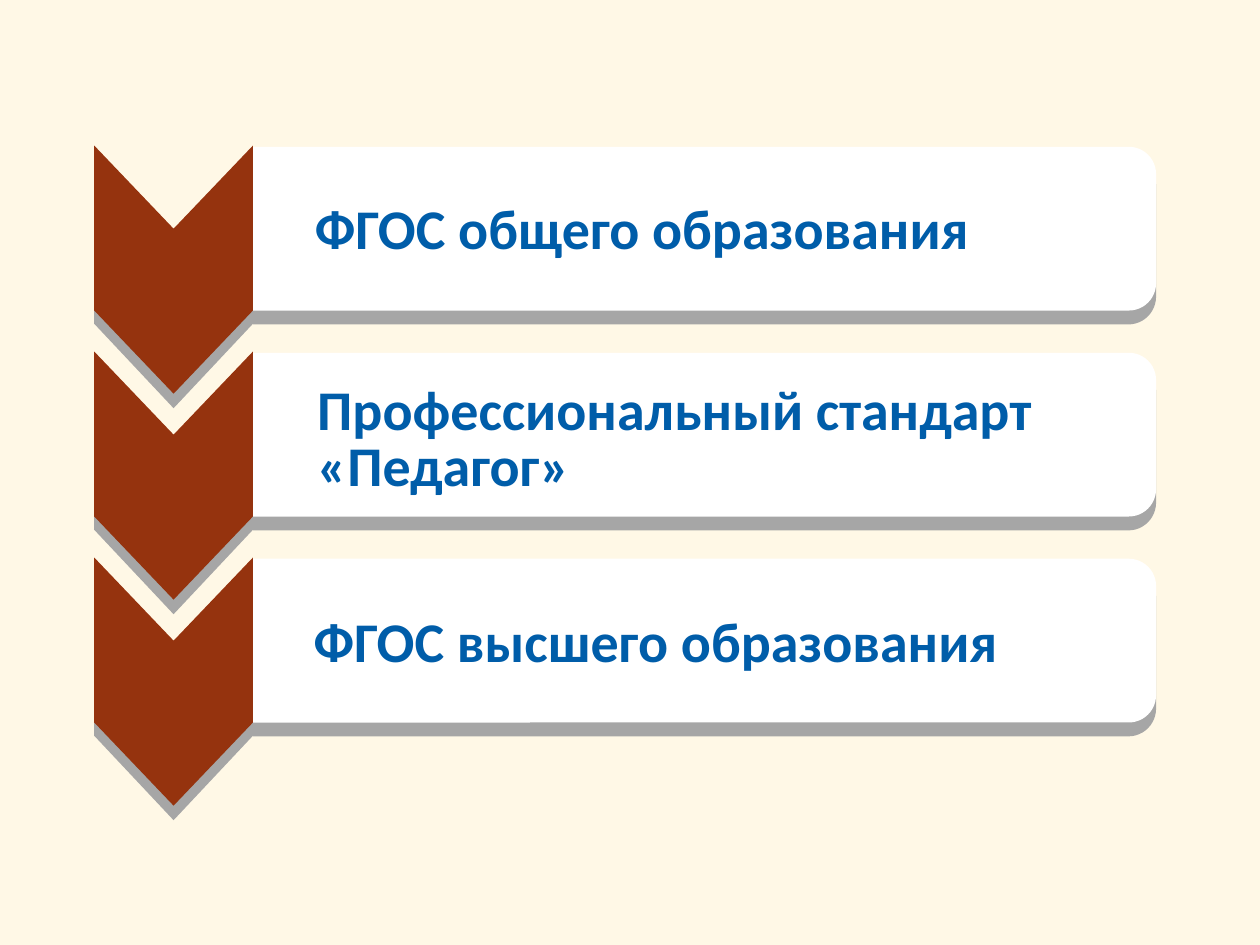
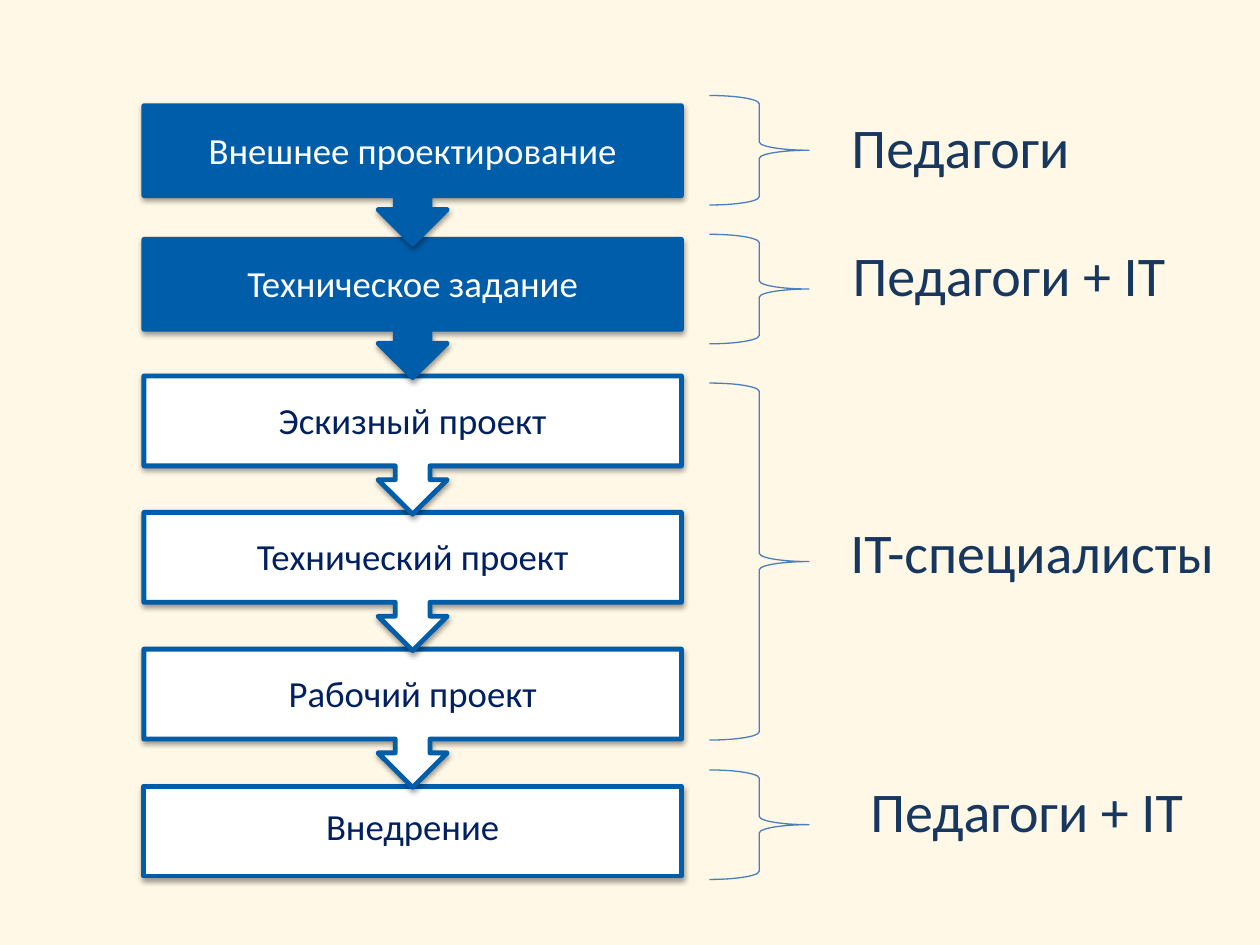
"""Build two slides on education standards and project stages."""
from lxml import etree
from pptx import Presentation
from pptx import util as u
from pptx.dml.color import RGBColor
from pptx.enum import shapes, text
from pptx.oxml import ns

CREAM = RGBColor(0xFF, 0xF8, 0xE6)
WHITE = RGBColor(0xFF, 0xFF, 0xFF)
GREY = RGBColor(0xA6, 0xA6, 0xA6)
BROWN = RGBColor(0x95, 0x33, 0x0E)
BLUE = RGBColor(0x00, 0x5D, 0xA9)
NAVY = RGBColor(0x00, 0x20, 0x60)
SLATE = RGBColor(0x17, 0x37, 0x5E)
BRACE_BLUE = RGBColor(0x4B, 0x7E, 0xBC)
FONT = "Calibri"
KIND = shapes.MSO_SHAPE

ROW_PITCH = 117.7
STANDARDS = [
    ("ФГОС общего образования", 172.8, 107.3, None),
    ("Профессиональный стандарт\v«Педагог»", 174.2, 216.7, 32),
    ("ФГОС высшего образования", 172.1, 351.4, 30),
]

STEP_LEFT, STEP_RIGHT, STEP_HEIGHT = 82.2, 389.4, 51.4
STEPS = [
    ("Внешнее проектирование", 60.4, BLUE, WHITE),
    ("Техническое задание", 136.8, BLUE, WHITE),
    ("Эскизный проект", 214.8, WHITE, NAVY),
    ("Технический проект", 292.8, WHITE, NAVY),
    ("Рабочий проект", 370.9, WHITE, NAVY),
    ("Внедрение", 449.2, WHITE, NAVY),
]
ROLES = [
    ("Педагоги", 54.6, 62.6, 479.5, 60.5),
    ("Педагоги + IT", 133.9, 62.6, 480.2, 133.9),
    ("IT-специалисты", 218.9, 204, 478.8, 292.3),
    ("Педагоги + IT", 440, 62.6, 490.3, 440),
]


def write(frame, words, size=32, color=BLUE, bold=False, align=None, spacing=None):
    """Put formatted words into a text frame."""
    frame.word_wrap = True
    para = frame.paragraphs[0]
    para.text = words
    para.alignment = align
    para.line_spacing = spacing
    for span in para.runs:
        span.font.name = FONT
        span.font.size = u.Pt(size)
        span.font.bold = bold
        span.font.color.rgb = color


class Painter:
    """Hold the deck style and draw on the current slide."""

    def __init__(self):
        """Start a deck with a cream background."""
        self.deck = Presentation()
        self.deck.slide_width, self.deck.slide_height = u.Pt(720), u.Pt(540)
        fill = self.deck.slide_master.background.fill
        fill.solid()
        fill.fore_color.rgb = CREAM
        self.slide = None

    def new_slide(self):
        """Add a blank slide and make it current."""
        self.slide = self.deck.slides.add_slide(self.deck.slide_layouts[6])

    def style(self, shape, fill=None, line=None, width=0.75):
        """Set fill and line, and drop the inherited shadow."""
        shape.shadow.inherit = False
        if fill is None:
            shape.fill.background()
        else:
            shape.fill.solid()
            shape.fill.fore_color.rgb = fill
        if line is None:
            shape.line.fill.background()
        else:
            shape.line.color.rgb = line
            shape.line.width = u.Pt(width)

    def shape(self, kind, left, top, width, height, **look):
        """Draw a preset shape."""
        shape = self.slide.shapes.add_shape(kind, *map(u.Pt, (left, top, width, height)))
        self.style(shape, **look)
        return shape

    def turned(self, kind, center_x, center_y, width, height, fill):
        """Draw a preset shape turned a quarter clockwise about its centre."""
        shape = self.shape(kind, center_x - width / 2, center_y - height / 2,
                           width, height, fill=fill)
        shape.rotation = 90
        return shape

    def chevron(self, center_y, length, notch, fill):
        """Draw a chevron that points down."""
        shape = self.turned(KIND.CHEVRON, 99.2, center_y, length, 90.7, fill)
        shape.adjustments[0] = notch

    def label(self, words, left, top, width, height, **look):
        """Draw a text box."""
        box = self.slide.shapes.add_textbox(*map(u.Pt, (left, top, width, height)))
        write(box.text_frame, words, **look)

    def cast_shadow(self, shape):
        """Give a shape a soft shadow below it."""
        effects = shape._element.spPr.find(ns.qn("a:effectLst"))
        shadow = etree.SubElement(effects, ns.qn("a:outerShdw"), blurRad=str(u.Pt(3.1)),
                                  dist=str(u.Pt(1.6)), dir="5400000", rotWithShape="0")
        black = etree.SubElement(shadow, ns.qn("a:srgbClr"), val="000000")
        etree.SubElement(black, ns.qn("a:alpha"), val="38000")

    def step(self, words, top, fill, color, arrow=True):
        """Draw a stage box, with an arrow down to the next stage."""
        middle, bottom = (STEP_LEFT + STEP_RIGHT) / 2, top + STEP_HEIGHT
        points = [(STEP_RIGHT, top), (STEP_RIGHT, bottom)]
        if arrow:
            neck = bottom + 7.9
            points += [(middle + 9.9, bottom), (middle + 9.9, neck),
                       (middle + 19.8, neck), (middle, bottom + 27.6),
                       (middle - 19.8, neck), (middle - 9.9, neck),
                       (middle - 9.9, bottom)]
        points.append((STEP_LEFT, bottom))
        outline = self.slide.shapes.build_freeform(u.Pt(STEP_LEFT), u.Pt(top))
        outline.add_line_segments([(u.Pt(x), u.Pt(y)) for x, y in points])
        box = outline.convert_to_shape()
        self.style(box, fill=fill, line=BLUE, width=2.75)
        self.cast_shadow(box)
        frame = box.text_frame
        frame.margin_left = frame.margin_right = frame.margin_top = u.Pt(11.5)
        frame.margin_bottom = u.Pt(37.4 if arrow else 14)
        frame.vertical_anchor = text.MSO_ANCHOR.MIDDLE
        write(frame, words, size=21, color=color, align=text.PP_ALIGN.CENTER, spacing=0.9)


def draw_standards(painter):
    """Draw the list of three standards."""
    painter.new_slide()
    for row in range(len(STANDARDS)):
        center_y = 130.7 + row * ROW_PITCH
        painter.turned(KIND.ROUND_2_SAME_RECTANGLE, 402.5, center_y + 7.2, 95, 516.2, GREY)
        painter.turned(KIND.ROUND_2_SAME_RECTANGLE, 402.5, center_y, 93.6, 516.2, WHITE)
        painter.chevron(center_y + 30.6, 144, 0.532, GREY)
        painter.chevron(center_y + 23.4, 141.8, 0.524, BROWN)
    for words, left, top, spacing in STANDARDS:
        painter.label(words, left, top, 470, 46, bold=True,
                      spacing=spacing and u.Pt(spacing))


def draw_stages(painter):
    """Draw the project stages and who carries them out."""
    painter.new_slide()
    for words, top, fill, color in reversed(STEPS):
        painter.step(words, top, fill, color, arrow=words != STEPS[-1][0])
    for words, brace_top, brace_height, left, top in ROLES:
        painter.shape(KIND.RIGHT_BRACE, 405.4, brace_top, 56.9, brace_height, line=BRACE_BLUE)
        painter.label(words, left, top, 235, 46, color=SLATE)


def main():
    """Build and save the deck."""
    painter = Painter()
    draw_standards(painter)
    draw_stages(painter)
    painter.deck.save("out.pptx")


if __name__ == "__main__":
    main()
